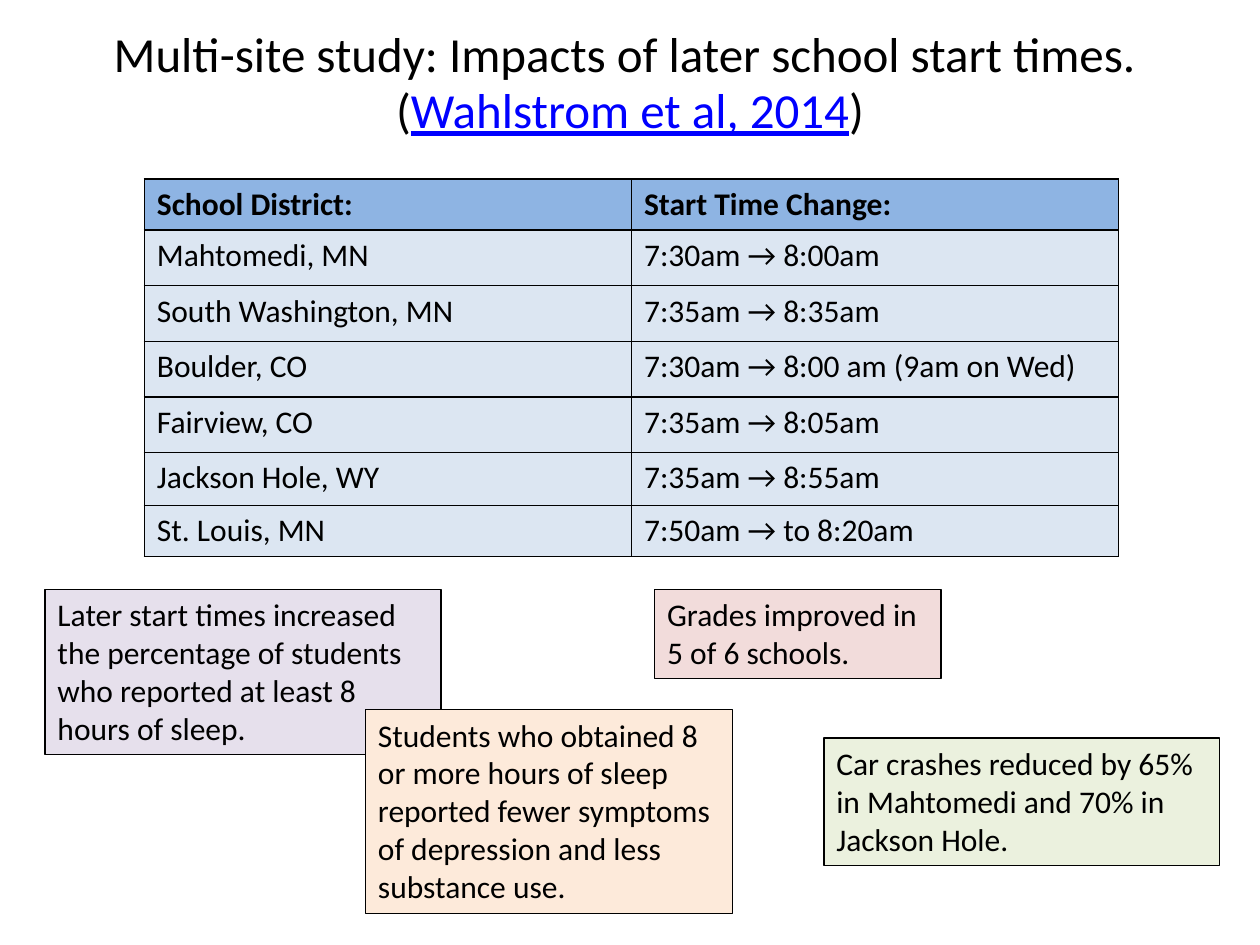
"""Build a slide on a multi-site study of later school start times."""
from lxml import etree
from pptx import Presentation
from pptx import util as u
from pptx.dml.color import RGBColor
from pptx.enum import text
from pptx.oxml import ns

BLACK = RGBColor(0x00, 0x00, 0x00)
LINK_BLUE = RGBColor(0x00, 0x00, 0xFF)
HEADER_BLUE = RGBColor(0x8E, 0xB4, 0xE3)
ROW_BLUE = RGBColor(0xDC, 0xE6, 0xF2)
ROSE = RGBColor(0xF2, 0xDC, 0xDB)
GREEN = RGBColor(0xEB, 0xF1, 0xDE)
LILAC = RGBColor(0xE6, 0xE0, 0xEC)
PEACH = RGBColor(0xFD, 0xEA, 0xDA)

DISTRICTS = [
    ("School District:", "Start Time Change:"),
    ("Mahtomedi, MN", "7:30am → 8:00am"),
    ("South Washington, MN", "7:35am → 8:35am"),
    ("Boulder, CO", "7:30am → 8:00 am (9am on Wed)"),
    ("Fairview, CO", "7:35am → 8:05am"),
    ("Jackson Hole, WY", "7:35am → 8:55am"),
    ("St. Louis, MN", "7:50am → to 8:20am"),
]
ROW_HEIGHTS = [1.03, 1.12, 1.12, 1.12, 1.12, 1.07, 1.03]

FINDINGS = [
    ("Grades improved in 5 of 6 schools.", ROSE, (13.2, 11.88, 5.77, 1.8)),
    ("Car crashes reduced by 65% in Mahtomedi and 70% in Jackson Hole.",
     GREEN, (16.61, 14.88, 7.98, 2.57)),
    ("Later start times increased the percentage of students who reported "
     "at least 8 hours of sleep.", LILAC, (0.91, 11.88, 7.98, 3.33)),
    ("Students who obtained 8 or more hours of sleep reported fewer symptoms "
     "of depression and less substance use.", PEACH, (7.37, 14.3, 7.4, 4.11)),
]


class SlideBuilder:
    """Hold the text style and the current slide."""

    def __init__(self, page):
        self.page = page
        self.style = {"name": "Calibri", "size": u.Pt(18), "bold": False}

    def add_span(self, para, words, color=BLACK, **changes):
        """Append a formatted run to a paragraph."""
        span = para.add_run()
        span.text = words
        for name, value in {**self.style, **changes}.items():
            setattr(span.font, name, value)
        span.font.color.rgb = color

    def add_title(self, first_line, citation, bounds):
        """Fill the title with a line of text and a cited source."""
        title = self.page.shapes.title
        for name, value in zip(("left", "top", "width", "height"), bounds):
            setattr(title, name, u.Cm(value))
        title.text_frame.vertical_anchor = text.MSO_ANCHOR.MIDDLE
        para = title.text_frame.paragraphs[0]
        para.alignment = text.PP_ALIGN.CENTER
        para.line_spacing = 0.95
        size = u.Pt(28)
        self.add_span(para, first_line, size=size)
        para.add_line_break()
        self.add_span(para, "(", size=size)
        self.add_span(para, citation, LINK_BLUE, size=size, underline=True)
        self.add_span(para, ")", size=size)

    def add_borders(self, cell):
        """Draw a thin black line on every side of a cell."""
        properties = cell._tc.get_or_add_tcPr()
        for position, side in enumerate(("lnL", "lnR", "lnT", "lnB")):
            line = etree.Element(ns.qn(f"a:{side}"), w=str(u.Pt(1)))
            fill = etree.SubElement(line, ns.qn("a:solidFill"))
            etree.SubElement(fill, ns.qn("a:srgbClr"), val=str(BLACK))
            properties.insert(position, line)

    def add_table(self, rows, heights, left, top, width):
        """Add a bordered table with a bold header row."""
        bounds = [u.Cm(value) for value in (left, top, width, sum(heights))]
        table = self.page.shapes.add_table(len(rows), len(rows[0]), *bounds).table
        for index, (row, height) in enumerate(zip(rows, heights)):
            table.rows[index].height = u.Cm(height)
            header = index == 0
            for cell, words in zip(table.rows[index].cells, row):
                cell.fill.solid()
                cell.fill.fore_color.rgb = HEADER_BLUE if header else ROW_BLUE
                self.add_borders(cell)
                self.add_span(cell.text_frame.paragraphs[0], words, bold=header)

    def add_finding(self, words, color, bounds):
        """Add an outlined, tinted box with one finding."""
        box = self.page.shapes.add_textbox(*[u.Cm(value) for value in bounds])
        box.fill.solid()
        box.fill.fore_color.rgb = color
        box.line.color.rgb = BLACK
        box.line.width = u.Pt(0.75)
        frame = box.text_frame
        frame.word_wrap = True
        frame.auto_size = text.MSO_AUTO_SIZE.SHAPE_TO_FIT_TEXT
        self.add_span(frame.paragraphs[0], words)


def main():
    """Create the deck and save it."""
    deck = Presentation()
    deck.slide_width, deck.slide_height = u.Cm(25.4), u.Cm(19.05)
    builder = SlideBuilder(deck.slides.add_slide(deck.slide_layouts[5]))
    builder.add_title("Multi-site study: Impacts of later school start times. ",
                      "Wahlstrom et al, 2014", (1.27, 0.2, 22.86, 2.97))
    builder.add_table(DISTRICTS, ROW_HEIGHTS, 2.91, 3.61, 19.64)
    for finding in FINDINGS:
        builder.add_finding(*finding)
    deck.save("out.pptx")


if __name__ == "__main__":
    main()
